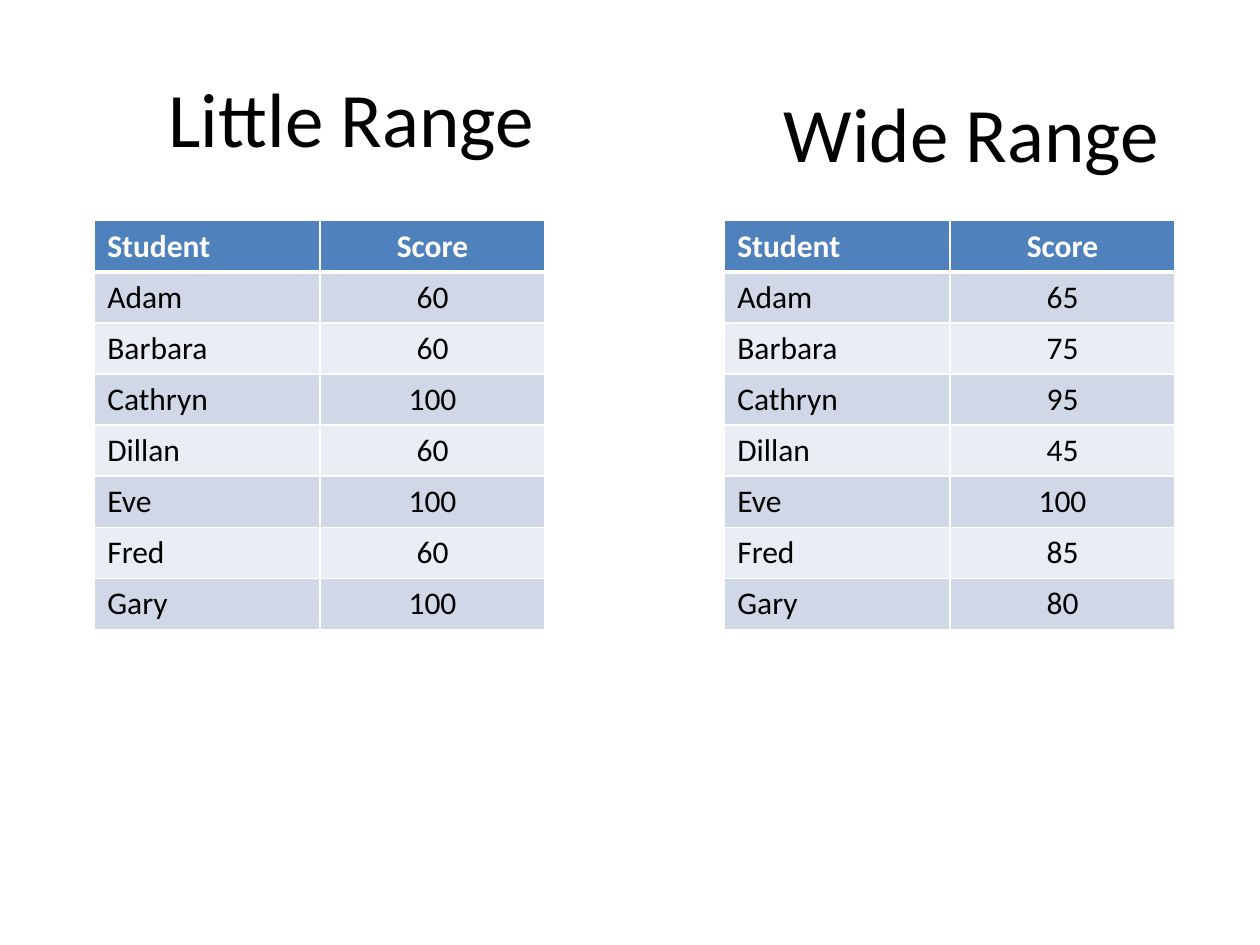
"""Build a slide comparing a little and a wide range of student scores."""
import dataclasses

import pptx
import pptx.dml.color
import pptx.enum.text
import pptx.oxml
import pptx.oxml.ns
import pptx.util

Cm = pptx.util.Cm
Align = pptx.enum.text.PP_ALIGN


@dataclasses.dataclass(frozen=True)
class Theme:
    font: str = "Calibri"
    title_size: int = 44
    table_size: int = 18
    text: str = "000000"
    white: str = "FFFFFF"
    header: str = "4F81BD"
    bands: tuple = ("D0D8E8", "E9EDF4")


theme = Theme()


def style(para, size, color, align, bold=False):
    para.alignment = align
    para.font.name = theme.font
    para.font.size = pptx.util.Pt(size)
    para.font.bold = bold
    para.font.color.rgb = pptx.dml.color.RGBColor.from_string(color)


def add_border(cell, side, points):
    cell._tc.get_or_add_tcPr().append(pptx.oxml.parse_xml(
        f'<a:{side} {pptx.oxml.ns.nsdecls("a")} w="{pptx.util.Pt(points)}">'
        f'<a:solidFill><a:srgbClr val="{theme.white}"/></a:solidFill></a:{side}>'))


students = ["Adam", "Barbara", "Cathryn", "Dillan", "Eve", "Fred", "Gary"]
panels = [
    ("Little Range", 1.27, 0.76, 1.91, [60, 60, 100, 60, 100, 60, 100]),
    ("Wide Range", 13.77, 1.07, 14.61, [65, 75, 95, 45, 100, 85, 80]),
]
column_width, row_height = 4.54, 1.03

deck = pptx.Presentation()
deck.slide_width, deck.slide_height = Cm(25.4), Cm(19.05)
page = deck.slides.add_slide(deck.slide_layouts[6])

for title, title_left, title_top, table_left, scores in panels:
    box = page.shapes.add_textbox(Cm(title_left), Cm(title_top), Cm(11.63), Cm(3.18))
    frame = box.text_frame
    frame.word_wrap = True
    frame.vertical_anchor = pptx.enum.text.MSO_ANCHOR.MIDDLE
    frame.text = title
    style(frame.paragraphs[0], theme.title_size, theme.text, Align.CENTER)

    rows = [("Student", "Score"), *zip(students, scores)]
    table = page.shapes.add_table(
        len(rows), 2, Cm(table_left), Cm(4.45),
        Cm(2 * column_width), Cm(len(rows) * row_height)).table
    for column in table.columns:
        column.width = Cm(column_width)
    for row_index, values in enumerate(rows):
        table.rows[row_index].height = Cm(row_height)
        is_header = row_index == 0
        fill = theme.header if is_header else theme.bands[(row_index - 1) % 2]
        color = theme.white if is_header else theme.text
        for column_index, value in enumerate(values):
            cell = table.cell(row_index, column_index)
            cell.text = str(value)
            align = Align.CENTER if column_index else Align.LEFT
            style(cell.text_frame.paragraphs[0], theme.table_size, color, align, is_header)
            add_border(cell, "lnL", 1)
            add_border(cell, "lnR", 1)
            add_border(cell, "lnT", 3 if row_index == 1 else 1)
            add_border(cell, "lnB", 3 if is_header else 1)
            cell.fill.solid()
            cell.fill.fore_color.rgb = pptx.dml.color.RGBColor.from_string(fill)

deck.save("out.pptx")
